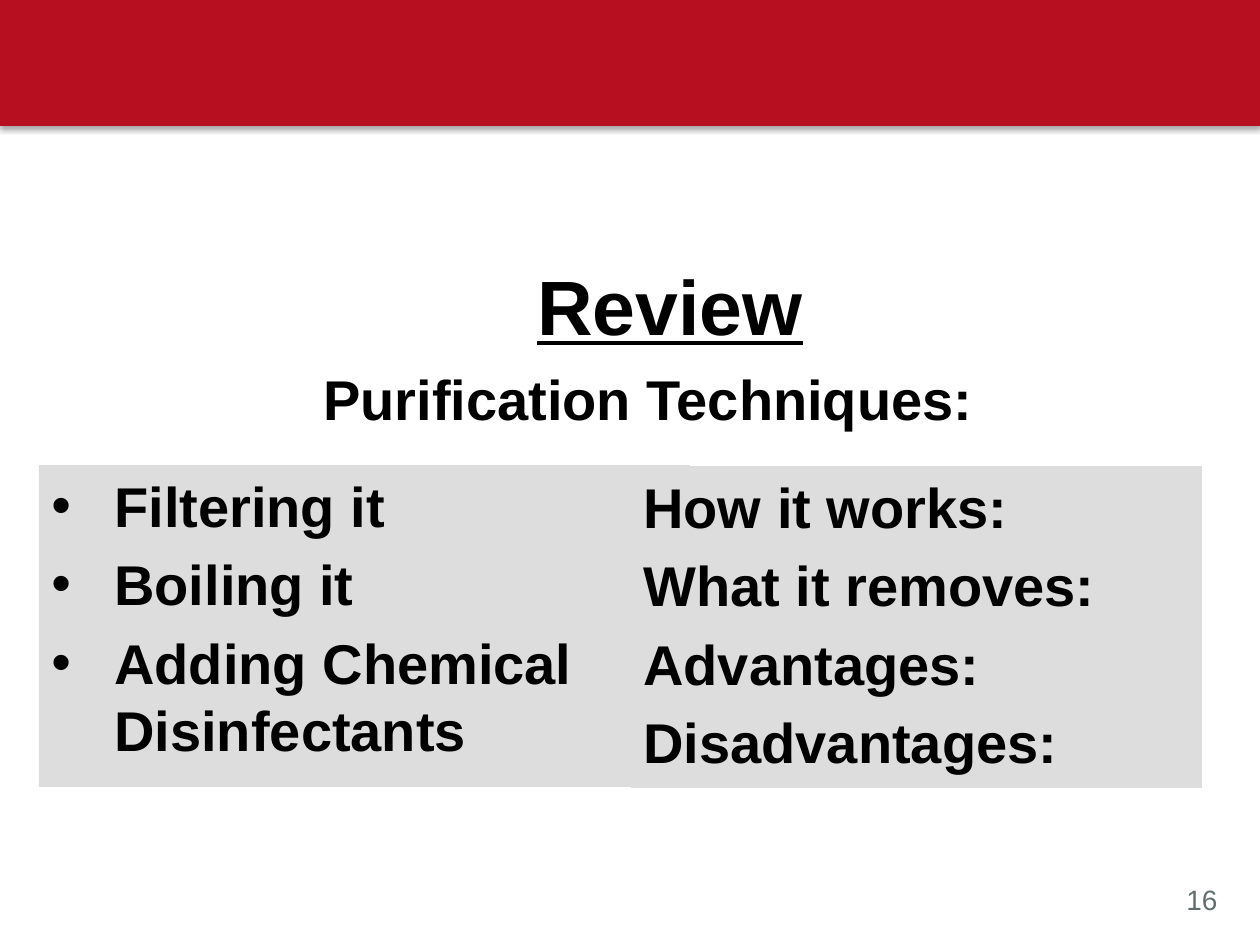
from dataclasses import dataclass

from lxml import etree
from pptx import Presentation
from pptx import util as u
from pptx.dml.color import RGBColor
from pptx.enum import shapes, text
from pptx.oxml.ns import qn

PX = 914400 / 126


@dataclass
class Panel:
    box: tuple[int, int, int, int]
    lines: list[str]
    size: int = 32
    fill: str = ""
    line: str = ""
    color: str = "000000"
    bold: bool = True
    under: bool = False
    center: bool = False
    bullet: bool = False
    wrap: bool = True


def px(n: int) -> u.Emu:
    return u.Emu(round(n * PX))


def rgb(code: str) -> RGBColor:
    return RGBColor.from_string(code)


def add_bullet(para) -> None:
    props = para._p.get_or_add_pPr()
    props.set("marL", str(px(63)))
    props.set("indent", str(-px(63)))
    etree.SubElement(props, qn("a:buFont")).set("typeface", "Arial")
    etree.SubElement(props, qn("a:buChar")).set("char", "•")


def add_shadow(shape) -> None:
    """Cast a soft shadow straight down."""
    shape.shadow.inherit = False
    effects = shape._element.spPr.find(qn("a:effectLst"))
    outer = etree.SubElement(effects, qn("a:outerShdw"), blurRad=str(u.Pt(3.1)),
                             dist=str(u.Pt(1.8)), dir="5400000", rotWithShape="0")
    color = etree.SubElement(outer, qn("a:srgbClr"), val="000000")
    etree.SubElement(color, qn("a:alpha"), val="35000")


def add_rect(slide, box: tuple[int, int, int, int], fill: str = "", line: str = ""):
    shape = slide.shapes.add_shape(shapes.MSO_SHAPE.RECTANGLE, *map(px, box))
    shape.shadow.inherit = False
    if fill:
        shape.fill.solid()
        shape.fill.fore_color.rgb = rgb(fill)
    else:
        shape.fill.background()
    if line:
        shape.line.color.rgb = rgb(line)
        shape.line.width = u.Pt(0.75)
    else:
        shape.line.fill.background()
    return shape


def add_panel(slide, panel: Panel) -> None:
    if panel.fill or panel.line:
        shape = add_rect(slide, panel.box, panel.fill, panel.line)
    else:
        shape = slide.shapes.add_textbox(*map(px, panel.box))
    frame = shape.text_frame
    frame.word_wrap = panel.wrap
    frame.vertical_anchor = text.MSO_ANCHOR.TOP
    frame.text = "\n".join(panel.lines)
    for i, para in enumerate(frame.paragraphs):
        para.alignment = text.PP_ALIGN.CENTER if panel.center else text.PP_ALIGN.LEFT
        if i:
            para.space_before = u.Pt(panel.size * 0.2)
        if panel.bullet:
            add_bullet(para)
        font = para.font
        font.name, font.size = "Arial", u.Pt(panel.size)
        font.bold, font.underline = panel.bold, panel.under
        font.color.rgb = rgb(panel.color)


PANELS = [
    Panel((1174, 876, 60, 47), ["16"], size=16, color="636D6E", bold=False, wrap=False),
    Panel((103, 252, 1134, 624), ["Review"], size=44, line="FFFFFF",
          under=True, center=True),
    Panel((39, 465, 651, 322),
          ["Filtering it", "Boiling it", "Adding Chemical Disinfectants"],
          fill="DDDDDD", bullet=True),
    Panel((631, 466, 571, 322),
          ["How it works:", "What it removes:", "Advantages:", "Disadvantages:"],
          fill="DDDDDD"),
    Panel((311, 358, 730, 219), ["Purification Techniques:"]),
]


def main() -> None:
    deck = Presentation()
    deck.slide_width, deck.slide_height = px(1260), px(945)
    slide = deck.slides.add_slide(deck.slide_layouts[6])
    add_shadow(add_rect(slide, (0, 0, 1260, 126), "B70F20"))
    for panel in PANELS:
        add_panel(slide, panel)
    deck.save("out.pptx")


if __name__ == "__main__":
    main()
